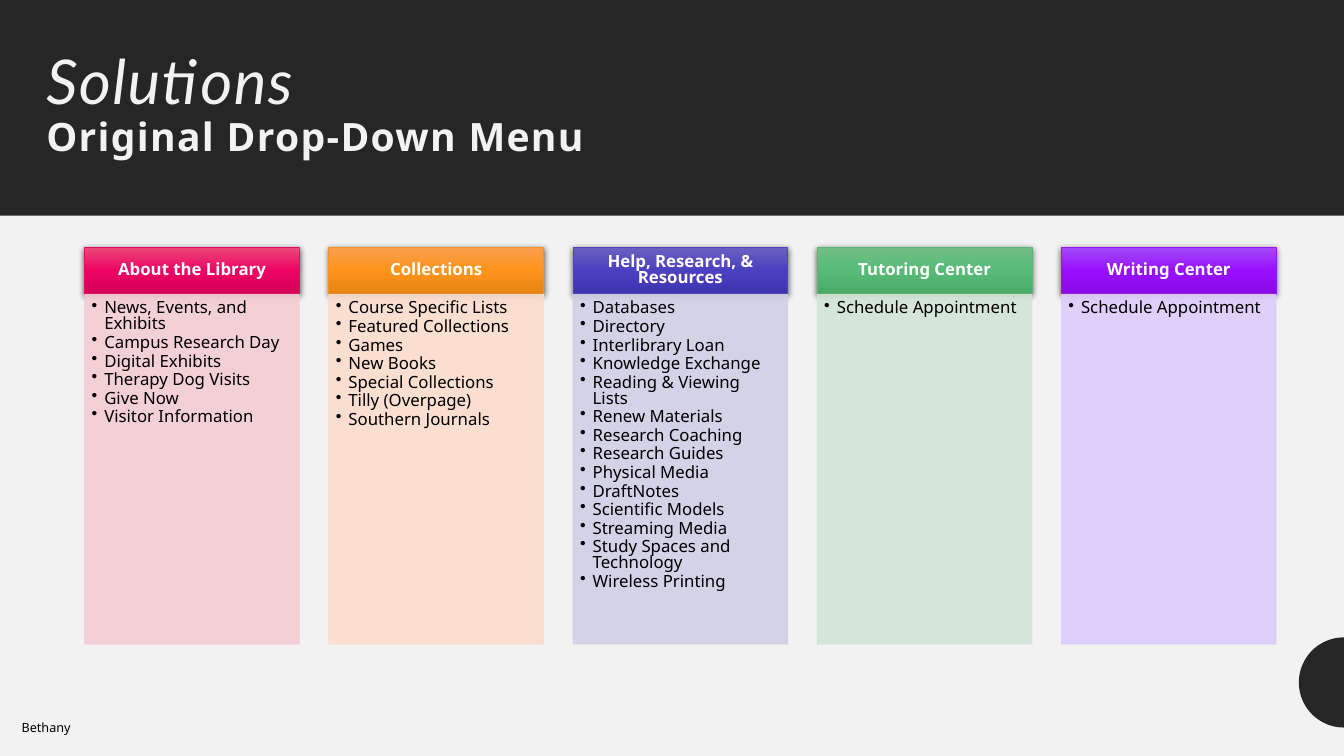
"""Builds the Solutions slide: a title band above five menu columns."""
from copy import deepcopy
from math import cos, pi, sin

from lxml import etree
from pptx import Presentation
from pptx import util as u
from pptx.dml.color import RGBColor
from pptx.enum import shapes, text
from pptx.oxml.ns import qn

MENUS = [
    ("About the Library", ("EB4B78", "ED0363", "D50058"), "E20E65", "F4CCD3",
     ["News, Events, and Exhibits", "Campus Research Day", "Digital Exhibits",
      "Therapy Dog Visits", "Give Now", "Visitor Information"]),
    ("Collections", ("F99F51", "FF941A", "E58315"), "F59324", "FBDCCD",
     ["Course Specific Lists", "Featured Collections", "Games", "New Books",
      "Special Collections", "Tilly (Overpage)", "Southern Journals"]),
    ("Help, Research, & Resources", ("6962C1", "4B40BF", "3F34AF"), "5046B9", "D0CFE6",
     ["Databases", "Directory", "Interlibrary Loan", "Knowledge Exchange",
      "Reading & Viewing Lists", "Renew Materials", "Research Coaching",
      "Research Guides", "Physical Media", "DraftNotes", "Scientific Models",
      "Streaming Media", "Study Spaces and Technology", "Wireless Printing"]),
    ("Tutoring Center", ("72BE88", "57BB76", "49AB67"), "5CB678", "D2E5D6",
     ["Schedule Appointment"]),
    ("Writing Center", ("A24DFB", "980FFF", "880BE5"), "9717F7", "DDCCFC",
     ["Schedule Appointment"]),
]
TITLE = [("Solutions", "Lato", 44.1, False, True),
         ("Original Drop-Down Menu", "Noto Sans", 27.9, True, False)]
DARK, PALE = "262626", "F2F2F2"
LEFT, STEP, WIDE = 60.5, 174.42, 153.4
TOP, HEAD, BODY = 176.4, 33.8, 249.9
DISC_X, DISC_Y, DISC_R, DISC_N = 960, 487.5, 32.2, 48
TIGHT = 0.79


def tint(color, code):
    color.rgb = RGBColor.from_string(code)


def paint(fill, code):
    fill.solid()
    tint(fill.fore_color, code)


def node(base, tag, **attrs):
    return etree.SubElement(base, qn(tag), {k: str(v) for k, v in attrs.items()})


def write(para, words, size, code, face="Noto Sans", bold=False, slant=False):
    run = para.add_run()
    run.text = words
    font = run.font
    font.name, font.size, font.bold, font.italic = face, u.Pt(size), bold, slant
    tint(font.color, code)
    return run


def inset(frame, *sides):
    (frame.margin_left, frame.margin_top,
     frame.margin_right, frame.margin_bottom) = map(u.Pt, sides)
    frame.word_wrap = True


def block(slide, x, y, wide, high):
    box = slide.shapes.add_shape(shapes.MSO_SHAPE.RECTANGLE,
                                 *map(u.Pt, (x, y, wide, high)))
    box.shadow.inherit = False
    box.line.fill.background()
    return box


def edge(box, code):
    paint(box.line.fill, code)
    box.line.width = u.Pt(0.5)


def add_head(slide, x, name, shades, rim):
    box = block(slide, x, TOP, WIDE, HEAD)
    box.fill.gradient()
    box.fill.gradient_angle = 270
    props = box._element.spPr
    first = props.find(".//" + qn("a:gs"))
    first.addnext(deepcopy(first))
    for i, (stop, shade) in enumerate(zip(box.fill.gradient_stops, shades)):
        stop.position = i / 2
        tint(stop.color, shade)
    edge(box, rim)
    glow = node(props.find(qn("a:effectLst")), "a:outerShdw", blurRad=u.Pt(4.5),
                dist=u.Pt(1.5), dir=5400000, algn="ctr", rotWithShape=0)
    node(node(glow, "a:srgbClr", val="000000"), "a:alpha", val=63000)
    frame = box.text_frame
    inset(frame, 6.5, 3.6, 6.5, 3.6)
    frame.vertical_anchor = text.MSO_ANCHOR.MIDDLE
    para = frame.paragraphs[0]
    para.alignment, para.line_spacing = text.PP_ALIGN.CENTER, TIGHT
    write(para, name, 12, "FFFFFF", bold=True)


def add_list(slide, x, code, items):
    box = block(slide, x, TOP + HEAD, WIDE, BODY)
    paint(box.fill, code)
    edge(box, code)
    for color in box._element.spPr.iter(qn("a:srgbClr")):
        node(color, "a:alpha", val=90000)
    frame = box.text_frame
    inset(frame, 5, 5, 6.5, 7.2)
    frame.vertical_anchor = text.MSO_ANCHOR.TOP
    for i, item in enumerate(items):
        para = frame.add_paragraph() if i else frame.paragraphs[0]
        para.alignment = text.PP_ALIGN.LEFT
        para.line_spacing, para.space_after = TIGHT, u.Pt(1.9)
        props = para._p.get_or_add_pPr()
        props.set("marL", str(u.Pt(9)))
        props.set("indent", str(u.Pt(-9)))
        node(props, "a:buChar", char="•")
        write(para, item, 12, "000000")


def label(slide, x, y, wide, high):
    box = slide.shapes.add_textbox(*map(u.Pt, (x, y, wide, high)))
    inset(box.text_frame, 7.2, 3.6, 7.2, 3.6)
    return box.text_frame


def add_title(slide):
    frame = label(slide, 26, 31, 922.3, 87.1)
    frame.vertical_anchor = text.MSO_ANCHOR.BOTTOM
    para = frame.paragraphs[0]
    para.line_spacing = 0.9
    for i, (words, face, size, bold, slant) in enumerate(TITLE):
        if i:
            para.add_line_break()
        run = write(para, words, size, PALE, face, bold, slant)
        run._r.get_or_add_rPr().set("spc", "100")


def add_disc(slide):
    turns = [pi * i / DISC_N for i in range(DISC_N + 1)]
    dots = [(u.Pt(DISC_X - DISC_R * sin(t)), u.Pt(DISC_Y - DISC_R * cos(t)))
            for t in turns]
    path = slide.shapes.build_freeform(*dots[0])
    path.add_line_segments(dots[1:], close=True)
    disc = path.convert_to_shape()
    disc.shadow.inherit = False
    paint(disc.fill, DARK)
    disc.line.fill.background()


def main():
    deck = Presentation()
    deck.slide_width, deck.slide_height = u.Pt(960), u.Pt(540)
    slide = deck.slides.add_slide(deck.slide_layouts[6])
    paint(slide.background.fill, PALE)
    paint(block(slide, 0, 0, 960, 154).fill, DARK)
    add_title(slide)
    add_disc(slide)
    for i, (name, shades, rim, pale, items) in enumerate(MENUS):
        x = LEFT + i * STEP
        add_head(slide, x, name, shades, rim)
        add_list(slide, x, pale, items)
    note = label(slide, 8.4, 510.4, 52, 18.2)
    write(note.paragraphs[0], "Bethany", 9, "000000")
    deck.save("out.pptx")


if __name__ == "__main__":
    main()
